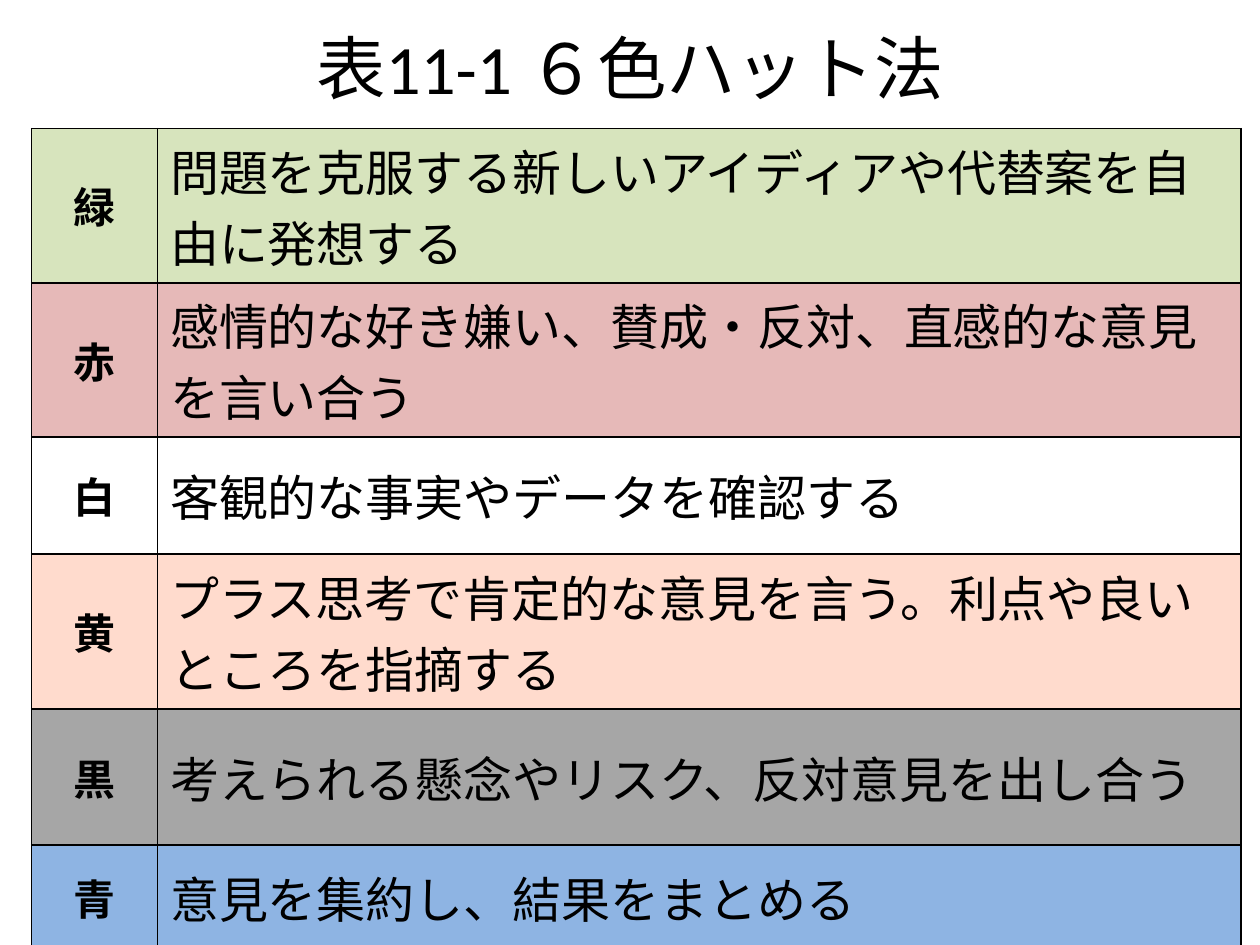
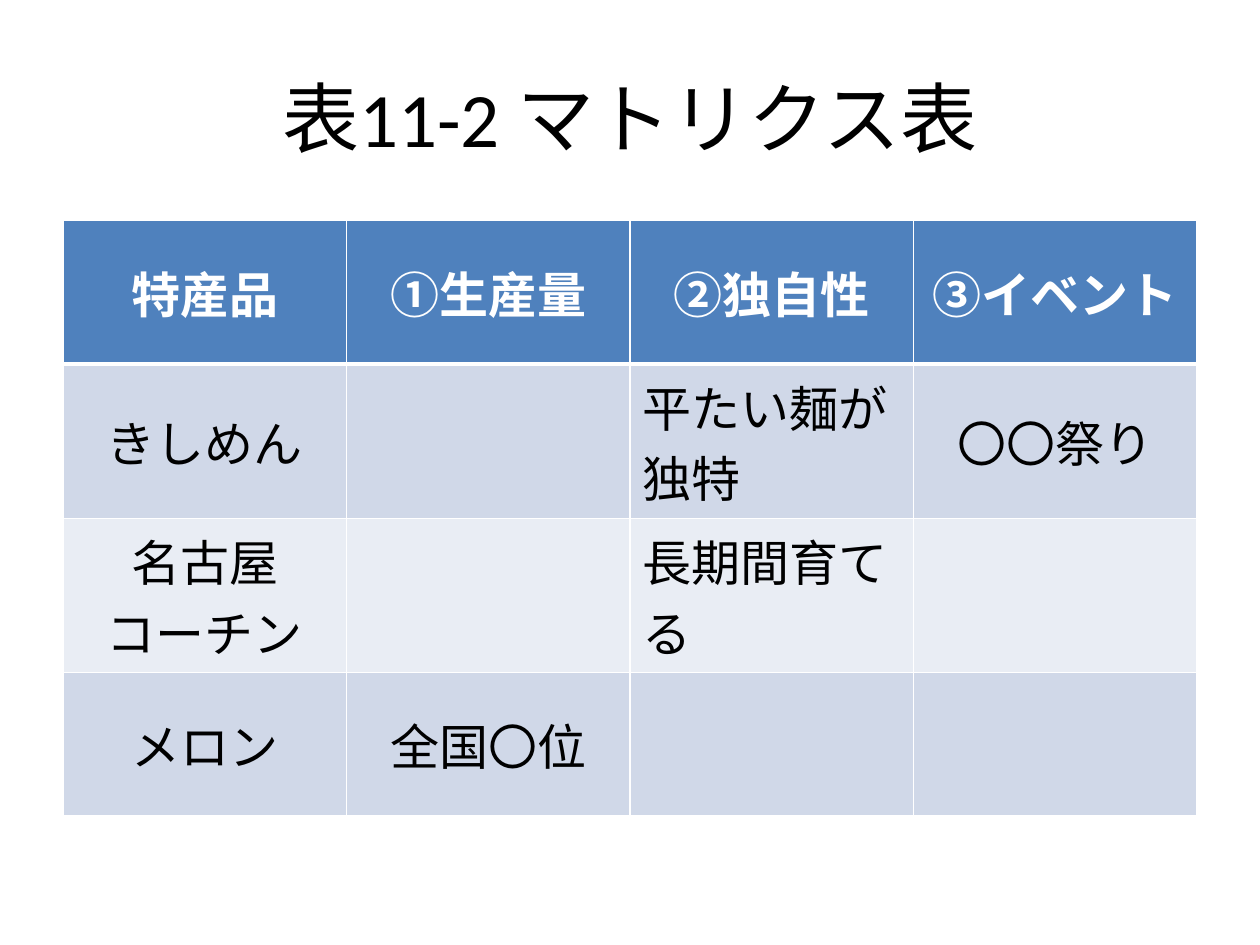
from lxml.etree import SubElement
from pptx import Presentation
from pptx.dml.color import RGBColor
from pptx.enum.text import MSO_ANCHOR as Anchor, MSO_AUTO_SIZE as AutoSize, PP_ALIGN as Align
from pptx.oxml import parse_xml
from pptx.oxml.ns import nsdecls, qn
from pptx.util import Inches, Pt

GRID_COLUMNS, GRID_ROWS = 40, 30
BLACK, WHITE = "000000", "FFFFFF"
HEADER_BLUE, BAND_DARK, BAND_LIGHT = "4F81BD", "D0D8E8", "E9EDF4"
LATIN_FONT, JAPANESE_FONT = "Calibri", "Noto Sans CJK JP"

HAT_LABEL = {"size": 24, "bold": True, "align": Align.CENTER}
HAT_MEANING = {"size": 28, "name": JAPANESE_FONT, "align": Align.LEFT}
MATRIX_HEADER = {"size": 28, "bold": True, "color": WHITE, "align": Align.CENTER}
MATRIX_CENTERED = {"size": 28, "align": Align.CENTER}
MATRIX_LEFT = {"size": 28, "align": Align.LEFT}

# Colour name, what it stands for, fill, height in grid rows
HATS = [
    ("緑", "問題を克服する新しいアイディアや代替案を自由に発想する", "D7E4BD", 4.72),
    ("赤", "感情的な好き嫌い、賛成・反対、直感的な意見を言い合う", "E6B9B8", 3.28),
    ("白", "客観的な事実やデータを確認する", WHITE, 3.72),
    ("黄", "プラス思考で肯定的な意見を言う。利点や良いところを指摘する", "FFDBCD", 4.92),
    ("黒", "考えられる懸念やリスク、反対意見を出し合う", "A6A6A6", 4.32),
    ("青", "意見を集約し、結果をまとめる", "8EB4E3", 3.28),
]

MATRIX = [
    ("特産品", "①生産量", "②独自性", "③イベント"),
    ("きしめん", "", "平たい麺が独特", "〇〇祭り"),
    ("名古屋\nコーチン", "", "長期間育てる", ""),
    ("メロン", "全国〇位", "", ""),
]


def rgb(color):
    return RGBColor.from_string(color)


class Deck:
    def __init__(self):
        self.presentation = Presentation()
        self.presentation.slide_width = Inches(10)
        self.presentation.slide_height = Inches(7.5)
        self.slide = None

    def across(self, columns):
        return round(self.presentation.slide_width * columns / GRID_COLUMNS)

    def down(self, rows):
        return round(self.presentation.slide_height * rows / GRID_ROWS)

    def set_text(self, text_frame, text, style):
        """Fill the first paragraph, turning newlines into line breaks."""
        style = {"name": LATIN_FONT, "color": BLACK, "bold": False, **style}
        paragraph = text_frame.paragraphs[0]
        paragraph.alignment = style["align"]
        font_values = {"name": style["name"], "size": Pt(style["size"]), "bold": style["bold"]}
        for index, line in enumerate(text.split("\n")):
            if index:
                paragraph.add_line_break()
            run = paragraph.add_run()
            run.text = line
            for attribute, value in font_values.items():
                setattr(run.font, attribute, value)
            run.font.color.rgb = rgb(style["color"])
            SubElement(run.font._element, qn("a:ea"), typeface=JAPANESE_FONT)

    def add_titled_slide(self, title, size, top, height):
        layout = self.presentation.slide_layouts[5]
        self.slide = self.presentation.slides.add_slide(layout)
        shape = self.slide.shapes.title
        place = {"left": self.across(2), "top": self.down(top),
                 "width": self.across(36), "height": self.down(height)}
        for attribute, value in place.items():
            setattr(shape, attribute, value)
        shape.text_frame.auto_size = AutoSize.NONE
        shape.text_frame.vertical_anchor = Anchor.MIDDLE
        self.set_text(shape.text_frame, title, {"size": size, "align": Align.CENTER})

    def add_table(self, left, top, widths, heights):
        frame = self.slide.shapes.add_table(
            len(heights), len(widths), self.across(left), self.down(top),
            self.across(sum(widths)), self.down(sum(heights)))
        table = frame.table
        for column, width in zip(table.columns, widths):
            column.width = self.across(width)
        for row, height in zip(table.rows, heights):
            row.height = self.down(height)
        return table

    def fill_cell(self, cell, text, style, fill, border, top=1, bottom=1):
        """Set one cell; top and bottom are border widths in points."""
        cell.vertical_anchor = Anchor.MIDDLE
        cell.fill.solid()
        cell.fill.fore_color.rgb = rgb(fill)
        if text:
            self.set_text(cell.text_frame, text, style)
        properties = cell._tc.get_or_add_tcPr()
        widths = {"L": 1, "R": 1, "T": top, "B": bottom}
        for index, (side, width) in enumerate(widths.items()):
            properties.insert(index, parse_xml(
                f'<a:ln{side} {nsdecls("a")} w="{Pt(width)}"><a:solidFill>'
                f'<a:srgbClr val="{border}"/></a:solidFill></a:ln{side}>'))


def build_hats(deck):
    deck.add_titled_slide("表11-1 ６色ハット法", 39.6, top=0.8, height=2.64)
    table = deck.add_table(1, 4.08, [4, 34.4], [hat[-1] for hat in HATS])
    for row, (label, meaning, fill, _) in enumerate(HATS):
        deck.fill_cell(table.cell(row, 0), label, HAT_LABEL, fill, BLACK)
        deck.fill_cell(table.cell(row, 1), meaning, HAT_MEANING, fill, BLACK)


def build_matrix(deck):
    deck.add_titled_slide("表11-2 マトリクス表", 44, top=1.2, height=5)
    table = deck.add_table(2, 7, [9] * len(MATRIX[0]), [4.56] * len(MATRIX))
    for row, texts in enumerate(MATRIX):
        fill = HEADER_BLUE if row == 0 else BAND_DARK if row % 2 else BAND_LIGHT
        for column, text in enumerate(texts):
            body_style = MATRIX_LEFT if column == 2 else MATRIX_CENTERED
            deck.fill_cell(table.cell(row, column), text,
                           MATRIX_HEADER if row == 0 else body_style, fill, WHITE,
                           top=3 if row == 1 else 1, bottom=3 if row == 0 else 1)


def main():
    deck = Deck()
    build_hats(deck)
    build_matrix(deck)
    deck.presentation.save("out.pptx")


if __name__ == "__main__":
    main()
